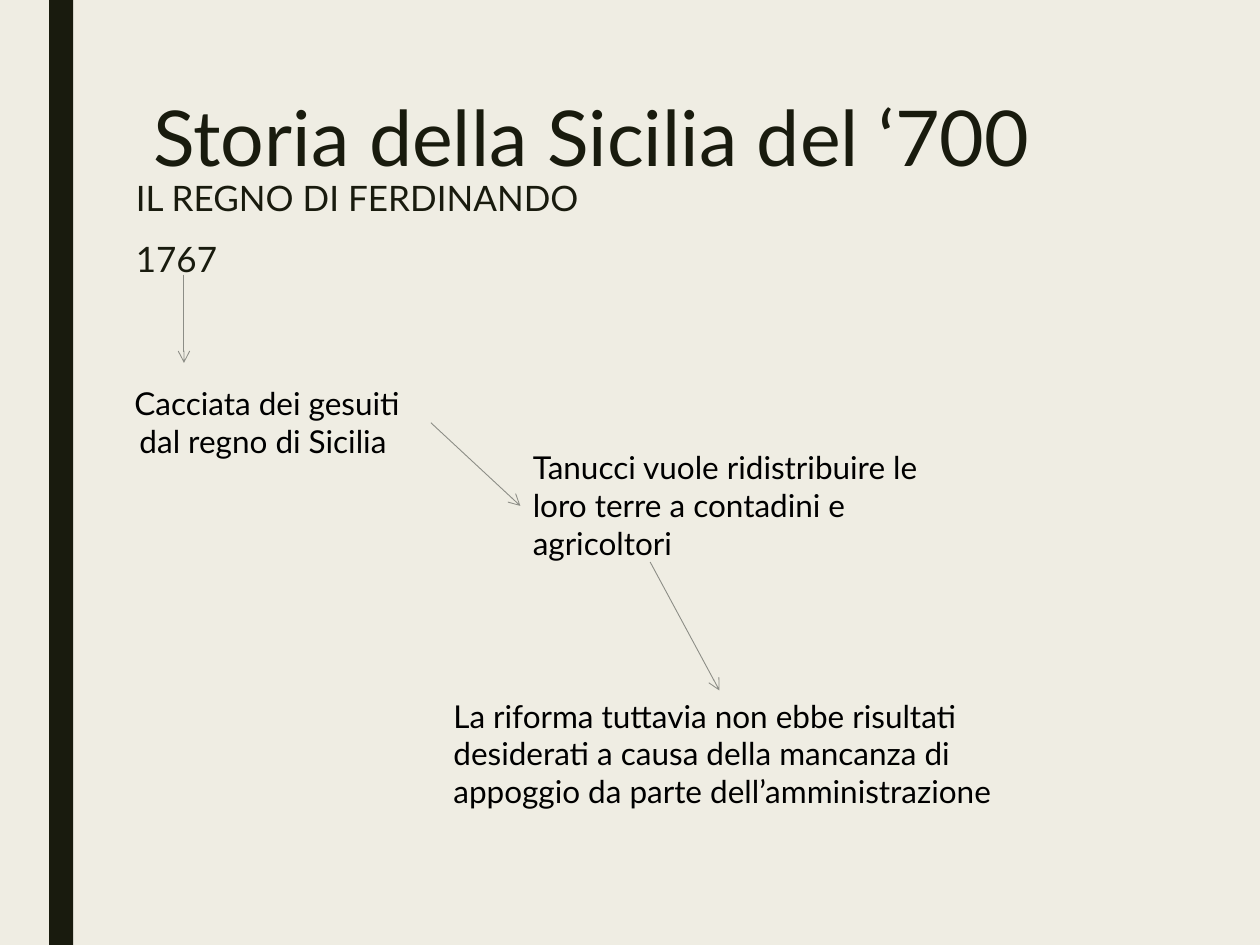
from lxml.etree import SubElement
from pptx import Presentation
from pptx.dml.color import RGBColor
from pptx.enum.shapes import MSO_CONNECTOR as Connector, MSO_SHAPE as Shape
from pptx.enum.text import MSO_ANCHOR as Anchor, MSO_AUTO_SIZE as AutoSize, PP_ALIGN as Align
from pptx.oxml.ns import qn
from pptx.util import Inches, Pt

FONT = "Lato"
CREAM = RGBColor(0xEF, 0xED, 0xE3)
DARK = RGBColor(0x19, 0x1B, 0x0E)
BLACK = RGBColor(0, 0, 0)
GREY = RGBColor(0x8C, 0x8D, 0x86)

WIDTH, HEIGHT = Inches(10), Inches(7.5)

# Areas and points are percentages of the slide's width and height.
SIDE_BAR = (3.9, 0, 1.9, 100)
TITLE = ("Storia della Sicilia del ‘700", (11.2, 10, 78.8, 21.6))
HEADINGS = (["IL REGNO DI FERDINANDO", "1767"], (9.8, 18.4, 78.8, 52.27))
EVENTS = {
    "expulsion": ("Cacciata dei gesuiti dal regno di Sicilia ",
                  (8.2, 40, 26, 9.47), Align.CENTER),
    "land": ("Tanucci vuole ridistribuire le loro terre a contadini e agricoltori",
             (41.3, 46.8, 33.9, 13.47), Align.LEFT),
    "outcome": ("La riforma tuttavia non ebbe risultati desiderati a causa della "
                "mancanza di appoggio da parte dell’amministrazione",
                (35, 73.07, 46.9, 13.47), Align.LEFT),
}
FREE_ARROWS = [
    (14.6, 29.07, 14.6, 38.4),
    (51.6, 59.47, 57.1, 73.07),
]
RIGHT_SIDE, LEFT_SIDE = 3, 1


def place(area):
    return [round(share * size / 100) for share, size in zip(area, (WIDTH, HEIGHT) * 2)]


def add_text(slide, lines, area, size, color, align=Align.LEFT):
    box = slide.shapes.add_textbox(*place(area))
    frame = box.text_frame
    frame.word_wrap = True
    frame.vertical_anchor = Anchor.TOP
    for index, line in enumerate(lines):
        paragraph = frame.paragraphs[0] if index == 0 else frame.add_paragraph()
        paragraph.alignment = align
        run = paragraph.add_run()
        run.text = line
        run.font.name = FONT
        run.font.size = Pt(size)
        run.font.color.rgb = color
    return box


def add_arrow(slide, points):
    arrow = slide.shapes.add_connector(Connector.STRAIGHT, *place(points))
    arrow.line.color.rgb = GREY
    arrow.line.width = Pt(0.5)
    SubElement(arrow.line._get_or_add_ln(), qn("a:tailEnd"), type="arrow")
    SubElement(arrow._element.spPr, qn("a:effectLst"))
    return arrow


def main():
    presentation = Presentation()
    presentation.slide_width, presentation.slide_height = WIDTH, HEIGHT
    slide = presentation.slides.add_slide(presentation.slide_layouts[6])
    slide.background.fill.solid()
    slide.background.fill.fore_color.rgb = CREAM

    bar = slide.shapes.add_shape(Shape.RECTANGLE, *place(SIDE_BAR))
    bar.shadow.inherit = False
    bar.fill.solid()
    bar.fill.fore_color.rgb = DARK
    bar.line.fill.background()

    title_text, title_area = TITLE
    title = add_text(slide, [title_text], title_area, 44, DARK)
    title.text_frame.paragraphs[0].line_spacing = 0.89

    heading_lines, heading_area = HEADINGS
    headings = add_text(slide, heading_lines, heading_area, 20, DARK)
    for paragraph in headings.text_frame.paragraphs:
        paragraph.line_spacing = 0.94
        paragraph.space_before = Pt(10)
        paragraph.space_after = Pt(2)

    boxes = {}
    for name, (text, area, align) in EVENTS.items():
        boxes[name] = add_text(slide, [text], area, 18, BLACK, align)
        boxes[name].text_frame.auto_size = AutoSize.SHAPE_TO_FIT_TEXT

    for points in FREE_ARROWS:
        add_arrow(slide, points)
    joined_arrow = add_arrow(slide, (34.2, 44.8, 41.3, 53.6))
    joined_arrow.begin_connect(boxes["expulsion"], RIGHT_SIDE)
    joined_arrow.end_connect(boxes["land"], LEFT_SIDE)

    presentation.save("out.pptx")


if __name__ == "__main__":
    main()
